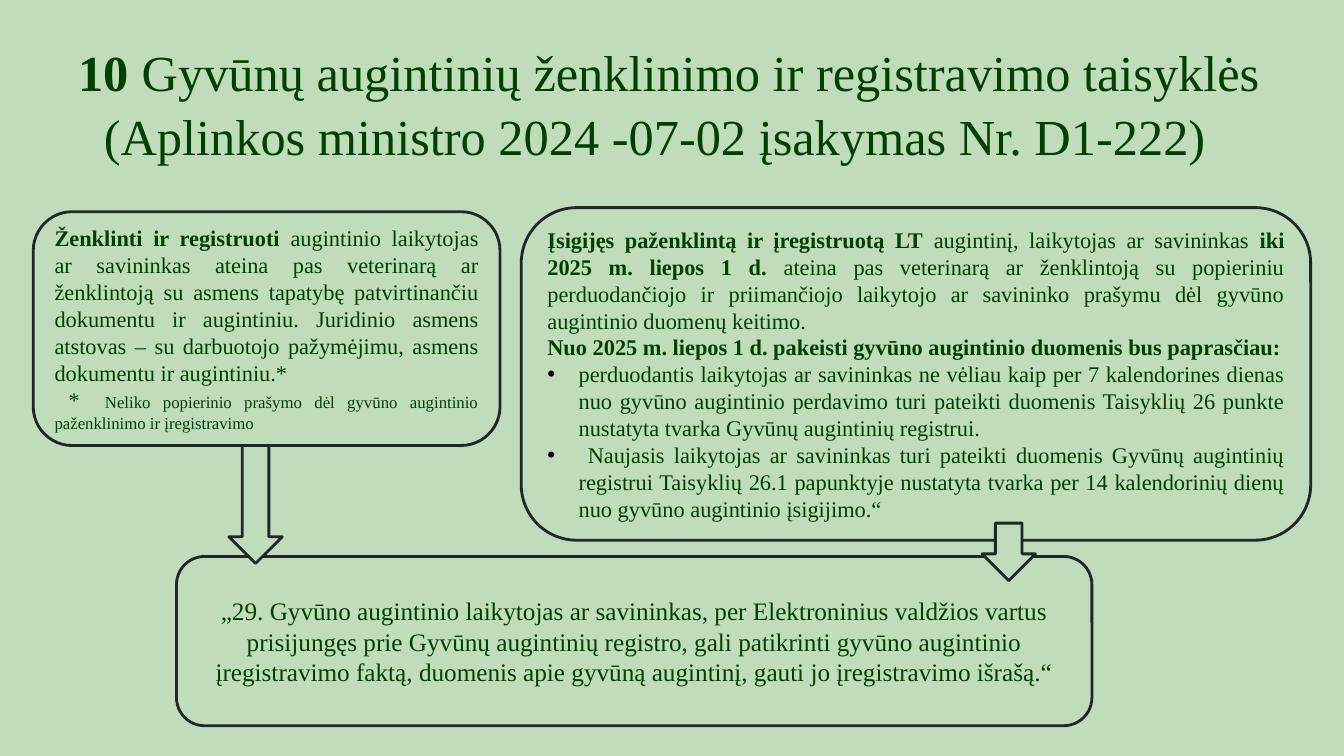
from dataclasses import dataclass

from lxml import etree
from pptx import Presentation
from pptx.dml.color import RGBColor
from pptx.enum.shapes import MSO_SHAPE
from pptx.enum.text import MSO_ANCHOR, MSO_AUTO_SIZE, PP_ALIGN
from pptx.oxml.ns import qn
from pptx.util import Inches, Pt

# Content: a paragraph is (kind, [(text, bold), ...])
TITLE = [
    ("10", True),
    (" Gyvūnų augintinių ženklinimo ir registravimo taisyklės "
     "(Aplinkos ministro 2024 -07-02 įsakymas Nr. D1-222)", False),
]
MARKING = [
    ("body", [
        ("Ženklinti ir registruoti ", True),
        ("augintinio laikytojas ar savininkas ateina pas veterinarą ar ženklintoją "
         "su asmens tapatybę patvirtinančiu dokumentu ir augintiniu. Juridinio asmens "
         "atstovas – su darbuotojo pažymėjimu, asmens dokumentu ir augintiniu.*", False),
    ]),
    ("footnote", [
        ("*", False),
        ("\tNeliko popierinio prašymo dėl gyvūno augintinio paženklinimo "
         "ir įregistravimo", False),
    ]),
]
TRANSFER = [
    ("body", [
        ("Įsigijęs paženklintą ir įregistruotą LT", True),
        (" augintinį, laikytojas ar savininkas ", False),
        ("iki 2025 m. liepos 1 d.", True),
        (" ateina pas veterinarą ar ženklintoją su popieriniu perduodančiojo ir "
         "priimančiojo laikytojo ar savininko prašymu dėl gyvūno augintinio duomenų "
         "keitimo.", False),
    ]),
    ("body", [("Nuo 2025 m. liepos 1 d. pakeisti gyvūno augintinio duomenis bus "
               "paprasčiau:", True)]),
    ("bullet", [("perduodantis laikytojas ar savininkas ne vėliau kaip per 7 kalendorines "
                 "dienas nuo gyvūno augintinio perdavimo turi pateikti duomenis Taisyklių "
                 "26 punkte nustatyta tvarka Gyvūnų augintinių registrui.", False)]),
    ("bullet", [(" Naujasis laikytojas ar savininkas turi pateikti duomenis Gyvūnų "
                 "augintinių registrui Taisyklių 26.1 papunktyje nustatyta tvarka per 14 "
                 "kalendorinių dienų nuo gyvūno augintinio įsigijimo.“", False)]),
]
REGISTRY = [
    ("result", [("„29. Gyvūno augintinio laikytojas ar savininkas, per Elektroninius valdžios "
                 "vartus prisijungęs prie Gyvūnų augintinių registro, gali patikrinti gyvūno "
                 "augintinio įregistravimo faktą, duomenis apie gyvūną augintinį, gauti jo "
                 "įregistravimo išrašą.“", False)]),
]

# Places: left, top, width, height in inches
TITLE_PLACE = (0.43, 0.3, 12.24, 1.35)
BOXES = [
    (MARKING, (0.33, 2.1, 4.63, 2.32)),
    (TRANSFER, (5.17, 2.06, 7.83, 3.3)),
    (REGISTRY, (1.75, 5.52, 9.08, 1.68)),
]
ARROW_WIDTH = 0.53
ARROWS = [(2.27, 4.42, 1.17), (9.74, 5.19, 0.57)]  # left, top, height


@dataclass(frozen=True)
class Theme:
    font: str = "Times New Roman"
    ground: RGBColor = RGBColor(0xC0, 0xDC, 0xBB)
    text: RGBColor = RGBColor(0x00, 0x41, 0x00)
    outline: RGBColor = RGBColor(0x20, 0x27, 0x2C)
    bullet: str = "000000"
    outline_width: Pt = Pt(2)
    title: Pt = Pt(36)
    result: Pt = Pt(18)
    body: Pt = Pt(16)
    footnote: Pt = Pt(12)


THEME = Theme()


def set_indent(paragraph, left, first):
    properties = paragraph._p.get_or_add_pPr()
    properties.set("marL", str(Inches(left)))
    properties.set("indent", str(Inches(first)))
    return properties


def add_bullet(paragraph):
    properties = set_indent(paragraph, 0.31, -0.31)
    color = etree.SubElement(properties, qn("a:buClr"))
    etree.SubElement(color, qn("a:srgbClr"), val=THEME.bullet)
    etree.SubElement(properties, qn("a:buFont"), typeface="Arial")
    etree.SubElement(properties, qn("a:buChar"), char="•")


def add_footnote_tab(paragraph):
    properties = set_indent(paragraph, 0, 0.14)
    tabs = etree.SubElement(properties, qn("a:tabLst"))
    etree.SubElement(tabs, qn("a:tab"), pos=str(Inches(0.52)), algn="l")


def write_runs(paragraph, runs, size):
    paragraph.font.name = THEME.font
    paragraph.font.size = size
    paragraph.font.color.rgb = THEME.text
    for text, bold in runs:
        run = paragraph.add_run()
        run.text = text
        run.font.bold = bold


def add_outlined(slide, preset, place):
    shape = slide.shapes.add_shape(preset, *map(Inches, place))
    shape.shadow.inherit = False
    shape.fill.solid()
    shape.fill.fore_color.rgb = THEME.ground
    shape.line.color.rgb = THEME.outline
    shape.line.width = THEME.outline_width
    return shape


def write_box(frame, paragraphs):
    frame.word_wrap = True
    frame.vertical_anchor = MSO_ANCHOR.MIDDLE
    for index, (kind, runs) in enumerate(paragraphs):
        paragraph = frame.add_paragraph() if index else frame.paragraphs[0]
        paragraph.alignment = PP_ALIGN.CENTER if kind == "result" else PP_ALIGN.JUSTIFY
        if kind == "bullet":
            add_bullet(paragraph)
        elif kind == "footnote":
            add_footnote_tab(paragraph)
        write_runs(paragraph, runs, THEME.result if kind == "result" else THEME.body)
        if kind == "footnote":
            paragraph.runs[-1].font.size = THEME.footnote


def write_title(title):
    title.left, title.top, title.width, title.height = map(Inches, TITLE_PLACE)
    frame = title.text_frame
    frame.auto_size = MSO_AUTO_SIZE.NONE
    frame.word_wrap = True
    frame.vertical_anchor = MSO_ANCHOR.TOP
    frame.margin_top = Inches(0.08)
    heading = frame.paragraphs[0]
    heading.alignment = PP_ALIGN.LEFT
    heading.line_spacing = 1.05
    set_indent(heading, 0.5, -0.25)
    write_runs(heading, TITLE, THEME.title)


def main():
    deck = Presentation()
    deck.slide_width, deck.slide_height = Inches(13.33), Inches(7.5)
    slide = deck.slides.add_slide(deck.slide_layouts[5])
    slide.background.fill.solid()
    slide.background.fill.fore_color.rgb = THEME.ground

    write_title(slide.shapes.title)

    # Rule boxes
    for paragraphs, place in BOXES:
        box = add_outlined(slide, MSO_SHAPE.ROUNDED_RECTANGLE, place)
        write_box(box.text_frame, paragraphs)

    # Arrows down to the registry box
    for left, top, height in ARROWS:
        add_outlined(slide, MSO_SHAPE.DOWN_ARROW, (left, top, ARROW_WIDTH, height))

    deck.save("out.pptx")


if __name__ == "__main__":
    main()
